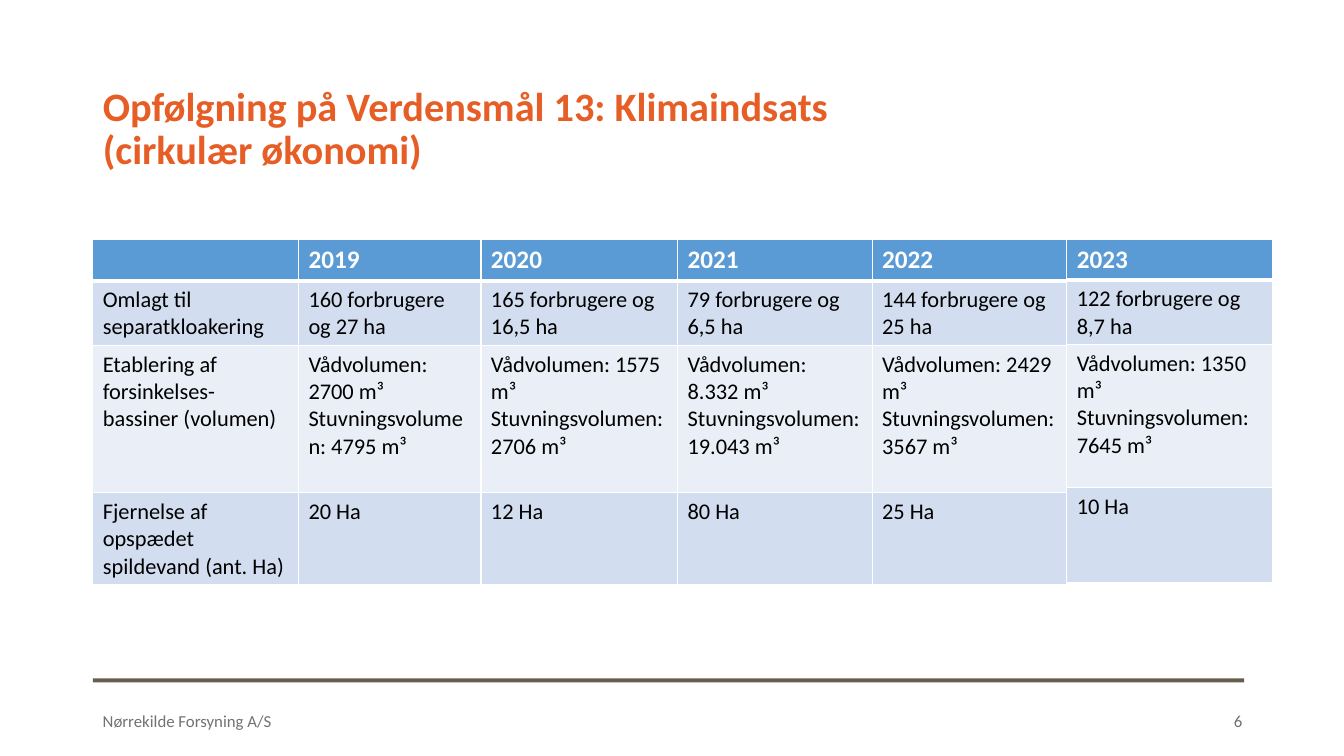
import pptx
import pptx.dml.color
import pptx.enum.shapes
import pptx.enum.text
import pptx.oxml
import pptx.oxml.ns
import pptx.util
from pptx.util import Inches

ALIGN = pptx.enum.text.PP_ALIGN
ANCHOR = pptx.enum.text.MSO_ANCHOR
RGB = pptx.dml.color.RGBColor.from_string


class Theme:
    font = "Calibri"
    orange, blue, band, light = "E65E25", "5B9BD5", "D2DEEF", "EAEFF7"
    rule, grey, black, white = "685E50", "767171", "000000", "FFFFFF"
    title, header, body, footer = 28.8, 18, 16, 12


def write(tf, text, size, color, bold=False, align=ALIGN.LEFT, anchor=ANCHOR.TOP, spacing=None):
    """Fill a text frame, one paragraph per line of text."""
    tf.word_wrap = True
    tf.vertical_anchor = anchor
    tf.text = text
    for p in tf.paragraphs:
        p.alignment = align
        p.line_spacing = spacing
        p.font.size = pptx.util.Pt(size)
        for r in p.runs:
            r.font.name = Theme.font
            r.font.size = pptx.util.Pt(size)
            r.font.bold = bold
            r.font.color.rgb = RGB(color)


def set_borders(cell, bottom):
    """Draw white cell borders, 1 pt wide except for the bottom one."""
    tcPr = cell._tc.get_or_add_tcPr()
    for side, width in (("L", 1), ("R", 1), ("T", 1), ("B", bottom)):
        tcPr.append(pptx.oxml.parse_xml(
            f'<a:ln{side} {pptx.oxml.ns.nsdecls("a")} w="{pptx.util.Pt(width)}">'
            f'<a:solidFill><a:srgbClr val="{Theme.white}"/></a:solidFill></a:ln{side}>'))


prs = pptx.Presentation()
prs.slide_width, prs.slide_height = Inches(13.33), Inches(7.5)
s = prs.slides.add_slide(prs.slide_layouts[5])

rule = s.shapes.add_shape(pptx.enum.shapes.MSO_SHAPE.RECTANGLE,
                          Inches(0.92), Inches(6.73), Inches(11.42), Inches(0.04))
rule.shadow.inherit = False
rule.fill.solid()
rule.fill.fore_color.rgb = RGB(Theme.rule)
rule.line.fill.background()

title = s.shapes.title
title.left, title.top, title.width, title.height = map(Inches, (0.92, 0.81, 8.31, 0.96))
write(title.text_frame, "Opfølgning på Verdensmål 13: Klimaindsats (cirkulær økonomi)",
      Theme.title, Theme.orange, bold=True, anchor=ANCHOR.BOTTOM, spacing=0.9)

for text, left, width, align in (("Nørrekilde Forsyning A/S", 0.92, 5.72, ALIGN.LEFT),
                                 ("6", 11.91, 0.51, ALIGN.RIGHT)):
    sp = s.shapes.add_textbox(Inches(left), Inches(6.96), Inches(width), Inches(0.39))
    write(sp.text_frame, text, Theme.footer, Theme.grey, align=align, anchor=ANCHOR.MIDDLE)

years_2019_2022 = [
    ["", "2019", "2020", "2021", "2022"],
    ["Omlagt til separatkloakering", "160 forbrugere og 27 ha", "165 forbrugere og 16,5 ha",
     "79 forbrugere og 6,5 ha", "144 forbrugere og 25 ha"],
    ["Etablering af forsinkelses-bassiner (volumen)",
     "Vådvolumen: 2700 m³\nStuvningsvolumen: 4795 m³",
     "Vådvolumen: 1575 m³\nStuvningsvolumen: 2706 m³",
     "Vådvolumen: 8.332 m³\nStuvningsvolumen: 19.043 m³",
     "Vådvolumen: 2429 m³\nStuvningsvolumen: 3567 m³"],
    ["Fjernelse af opspædet spildevand (ant. Ha)", "20 Ha", "12 Ha", "80 Ha", "25 Ha"],
]
year_2023 = [["2023"], ["122 forbrugere og 8,7 ha"],
             ["Vådvolumen: 1350 m³\nStuvningsvolumen: 7645 m³"], ["10 Ha"]]
row_fills = (Theme.blue, Theme.band, Theme.light, Theme.band)

for rows, left, widths, heights in (
        (years_2019_2022, 0.92, (2.04, 1.81, 1.95, 1.93, 1.93), (0.41, 0.64, 1.46, 0.91)),
        (year_2023, 10.58, (2.04,), (0.39, 0.64, 1.42, 0.94))):
    table = s.shapes.add_table(len(rows), len(widths), Inches(left), Inches(2.38),
                               Inches(sum(widths)), Inches(sum(heights))).table
    for column, width in zip(table.columns, widths):
        column.width = Inches(width)
    for i, (row, height) in enumerate(zip(rows, heights)):
        table.rows[i].height = Inches(height)
        header = i == 0
        for j, text in enumerate(row):
            cell = table.cell(i, j)
            set_borders(cell, bottom=3 if header else 1)
            cell.fill.solid()
            cell.fill.fore_color.rgb = RGB(row_fills[i])
            write(cell.text_frame, text, Theme.header if header else Theme.body,
                  Theme.white if header else Theme.black, bold=header)

prs.save("out.pptx")
